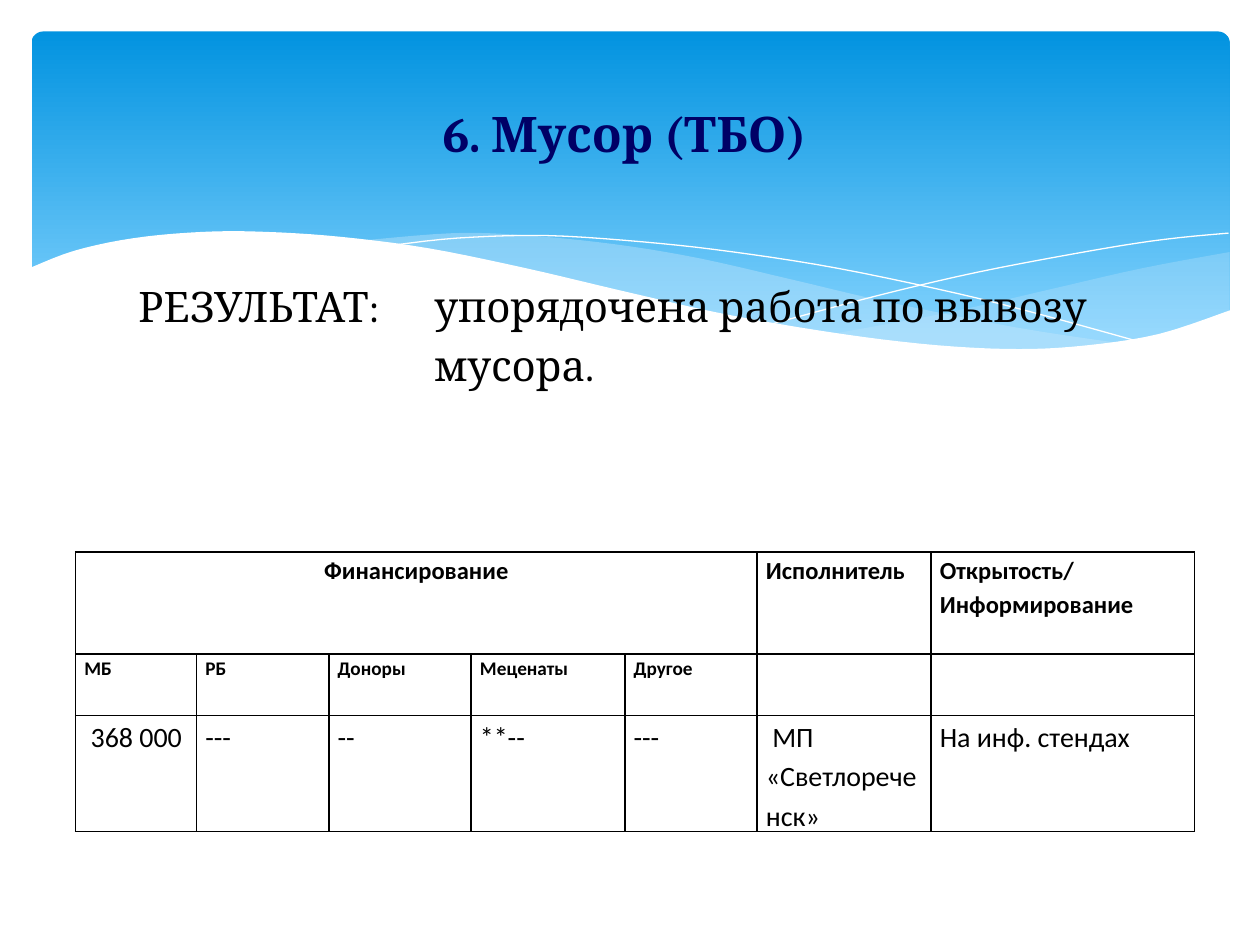
from dataclasses import dataclass

from lxml import etree
from pptx import Presentation
from pptx.dml.color import RGBColor
from pptx.enum.shapes import MSO_SHAPE
from pptx.enum.text import MSO_ANCHOR, PP_ALIGN
from pptx.oxml.ns import qn
from pptx.util import Inches, Pt

CENTER, LEFT = PP_ALIGN.CENTER, PP_ALIGN.LEFT
MIDDLE, TOP = MSO_ANCHOR.MIDDLE, MSO_ANCHOR.TOP
ROUNDED = MSO_SHAPE.ROUNDED_RECTANGLE


@dataclass(frozen=True)
class Theme:
    sky_top: str = "0293E0"
    sky_bottom: str = "83D3FE"
    mist: str = "C6E7FC"
    white: str = "FFFFFF"
    navy: str = "000066"
    black: str = "000000"
    heading_font: str = "Cambria"
    body_font: str = "Calibri"
    title_size: int = 28
    result_size: int = 24
    head_size: int = 14
    subhead_size: int = 11
    value_size: int = 16


THEME = Theme()

# Wave curves as key points, in inches from the corner of the header box
RIGHT_TOP = [(9.51, 1.75), (8.81, 1.88), (8.07, 2.05), (7.28, 2.23), (6.36, 2.4)]
RIGHT_BOTTOM = [(6.36, 2.4), (6.94, 2.47), (7.56, 2.52), (8.1, 2.52), (8.64, 2.47),
                (9.1, 2.37), (9.51, 2.22)]
MIDDLE_TOP = [(8.68, 2.48), (7.82, 2.35), (6.81, 2.15), (6.04, 1.97), (5.3, 1.8),
              (4.64, 1.69), (3.95, 1.62), (3.36, 1.6), (2.61, 1.66)]
MIDDLE_BOTTOM = [(2.61, 1.66), (3.37, 1.78), (4.24, 1.97), (5.05, 2.15), (5.93, 2.33),
                 (6.7, 2.45), (7.36, 2.52), (8.03, 2.53), (8.68, 2.48)]
FALLING_LINE = [(2.84, 1.7), (3.38, 1.64), (4.08, 1.62), (4.85, 1.67), (5.57, 1.75),
                (6.4, 1.88), (7.35, 2.08), (8.06, 2.26), (8.82, 2.47)]
RISING_LINE = [(5.88, 2.32), (6.7, 2.1), (7.51, 1.91), (8.41, 1.74), (8.99, 1.65),
               (9.5, 1.6)]
FRONT_EDGE = [(9.52, 2.21), (8.95, 2.4), (8.38, 2.49), (7.84, 2.52), (7.19, 2.49),
              (6.43, 2.4), (5.54, 2.25), (4.78, 2.08), (3.93, 1.88), (3.15, 1.72),
              (2.46, 1.63), (1.86, 1.59), (1.36, 1.59), (0.81, 1.64), (0.34, 1.74),
              (-0.02, 1.88)]
FRONT_BASE = [(-0.02, 3.04), (9.52, 3.04)]


def color(value):
    return RGBColor.from_string(value)


def smooth(points, steps=5):
    """Catmull-Rom curve through the key points."""
    padded = [points[0], *points, points[-1]]
    curve = []
    for a, b, c, d in zip(padded, padded[1:], padded[2:], padded[3:]):
        for step in range(steps):
            t = step / steps
            curve.append(tuple(
                0.5 * (2 * q + (r - p) * t + (2 * p - 5 * q + 4 * r - s) * t**2
                       + (3 * q - p - 3 * r + s) * t**3)
                for p, q, r, s in zip(a, b, c, d)))
    return curve + [points[-1]]


def add_wave(page, box, points, fill=None, opacity=None):
    """A filled wave, or a white hairline when no fill is given."""
    left, top = box[:2]
    spots = [(Inches(left + x), Inches(top + y)) for x, y in points]
    builder = page.shapes.build_freeform(*spots[0])
    builder.add_line_segments(spots[1:], close=fill is not None)
    wave = builder.convert_to_shape()
    wave.shadow.inherit = False
    if fill is None:
        wave.fill.background()
        wave.line.color.rgb = color(THEME.white)
        wave.line.width = Pt(0)
        return
    wave.fill.solid()
    wave.fill.fore_color.rgb = color(fill)
    wave.line.fill.background()
    if opacity is not None:
        tint = wave.fill._xPr.find(".//" + qn("a:srgbClr"))
        etree.SubElement(tint, qn("a:alpha"), val=str(opacity * 1000))


def add_header(page, box):
    panel = page.shapes.add_shape(ROUNDED, *map(Inches, box))
    panel.adjustments[0] = 0.034
    panel.shadow.inherit = False
    panel.line.fill.background()
    panel.fill.gradient()
    panel.fill.gradient_angle = 270
    stops = ((0, THEME.sky_top), (0.9, THEME.sky_bottom))
    for stop, (position, shade) in zip(panel.fill.gradient_stops, stops):
        stop.position = position
        stop.color.rgb = color(shade)

    add_wave(page, box, smooth(RIGHT_TOP) + smooth(RIGHT_BOTTOM), THEME.mist, 29)
    add_wave(page, box, smooth(MIDDLE_TOP) + smooth(MIDDLE_BOTTOM), THEME.mist, 40)
    add_wave(page, box, smooth(FALLING_LINE))
    add_wave(page, box, smooth(RISING_LINE))
    add_wave(page, box, smooth(FRONT_EDGE) + FRONT_BASE, THEME.white)


def style(para, font, size, shade, bold=False, align=LEFT):
    para.alignment = align
    for span in para.runs:
        span.font.name = font
        span.font.size = Pt(size)
        span.font.bold = bold
        span.font.color.rgb = color(shade)


def add_text(page, box, text, anchor=TOP):
    frame = page.shapes.add_textbox(*map(Inches, box)).text_frame
    frame.word_wrap = True
    frame.vertical_anchor = anchor
    frame.text = text
    return frame.paragraphs


def add_title(page, box):
    para, = add_text(page, box, "6. Мусор (ТБО) ", MIDDLE)
    style(para, THEME.heading_font, THEME.title_size, THEME.navy, True, CENTER)


def add_result(page, box):
    paras = add_text(page, box, "РЕЗУЛЬТАТ:\tупорядочена работа по вывозу\nмусора.")
    hang = Inches(2.35)
    for para, indent in zip(paras, (-hang, 0)):
        style(para, THEME.heading_font, THEME.result_size, THEME.black)
        para.space_before = Pt(4.8)
        # Hanging indent lines the second line up with the tabbed text
        layout = para._p.get_or_add_pPr()
        layout.set("marL", str(hang))
        layout.set("indent", str(indent))


def add_borders(cell):
    cell_format = cell._tc.get_or_add_tcPr()
    for index, side in enumerate(("lnL", "lnR", "lnT", "lnB")):
        border = etree.Element(qn("a:" + side), w=str(Pt(1)))
        fill = etree.SubElement(border, qn("a:solidFill"))
        etree.SubElement(fill, qn("a:srgbClr"), val=THEME.black)
        cell_format.insert(index, border)


def add_finance_table(page, box):
    widths = (0.96, 1.05, 1.13, 1.22, 1.05, 1.38, 2.09)
    heights = (0.81, 0.49, 0.92)
    rows = (
        ("Финансирование", "", "", "", "", "Исполнитель", "Открытость/Информирование"),
        ("МБ", "РБ", "Доноры", "Меценаты", "Другое", "", ""),
        (" 368 000", "---", "--", "**--", "---", " МП «Светлореченск»",
         "На инф. стендах"),
    )
    row_styles = ((THEME.head_size, True), (THEME.subhead_size, True),
                  (THEME.value_size, False))
    table = page.shapes.add_table(len(rows), len(widths), *map(Inches, box)).table
    table.first_row = table.horz_banding = False
    for column, width in zip(table.columns, widths):
        column.width = Inches(width)
    for row, height in zip(table.rows, heights):
        row.height = Inches(height)

    for r, (texts, (size, bold)) in enumerate(zip(rows, row_styles)):
        for c, text in enumerate(texts):
            cell = table.cell(r, c)
            cell.margin_left = cell.margin_right = Inches(0.07)
            cell.margin_top = cell.margin_bottom = 0
            cell.fill.background()
            add_borders(cell)
            cell.text = text
            para = cell.text_frame.paragraphs[0]
            para.line_spacing = 1.15
            style(para, THEME.body_font, size, THEME.black, bold,
                  CENTER if (r, c) == (0, 0) else LEFT)
    table.cell(0, 0).merge(table.cell(0, 4))


def main():
    deck = Presentation()
    deck.slide_width, deck.slide_height = Inches(10), Inches(7.5)
    page = deck.slides.add_slide(deck.slide_layouts[6])
    add_header(page, (0.25, 0.25, 9.51, 2.7))
    add_title(page, (0.5, 0.37, 9, 1.37))
    add_result(page, (1, 2.18, 8.1, 1.47))
    add_finance_table(page, (0.6, 4.38, 8.89, 2.22))
    deck.save("out.pptx")


if __name__ == "__main__":
    main()
